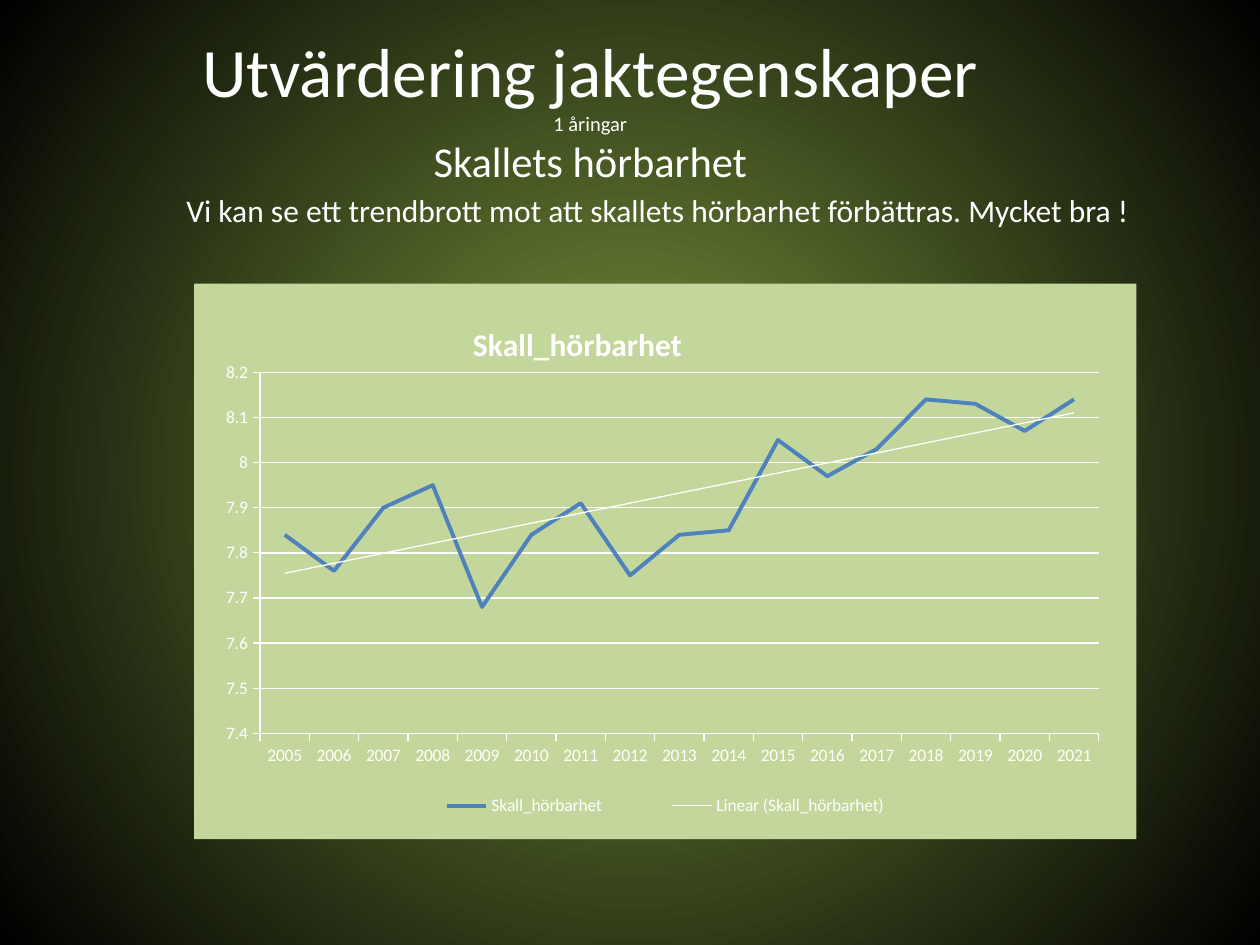
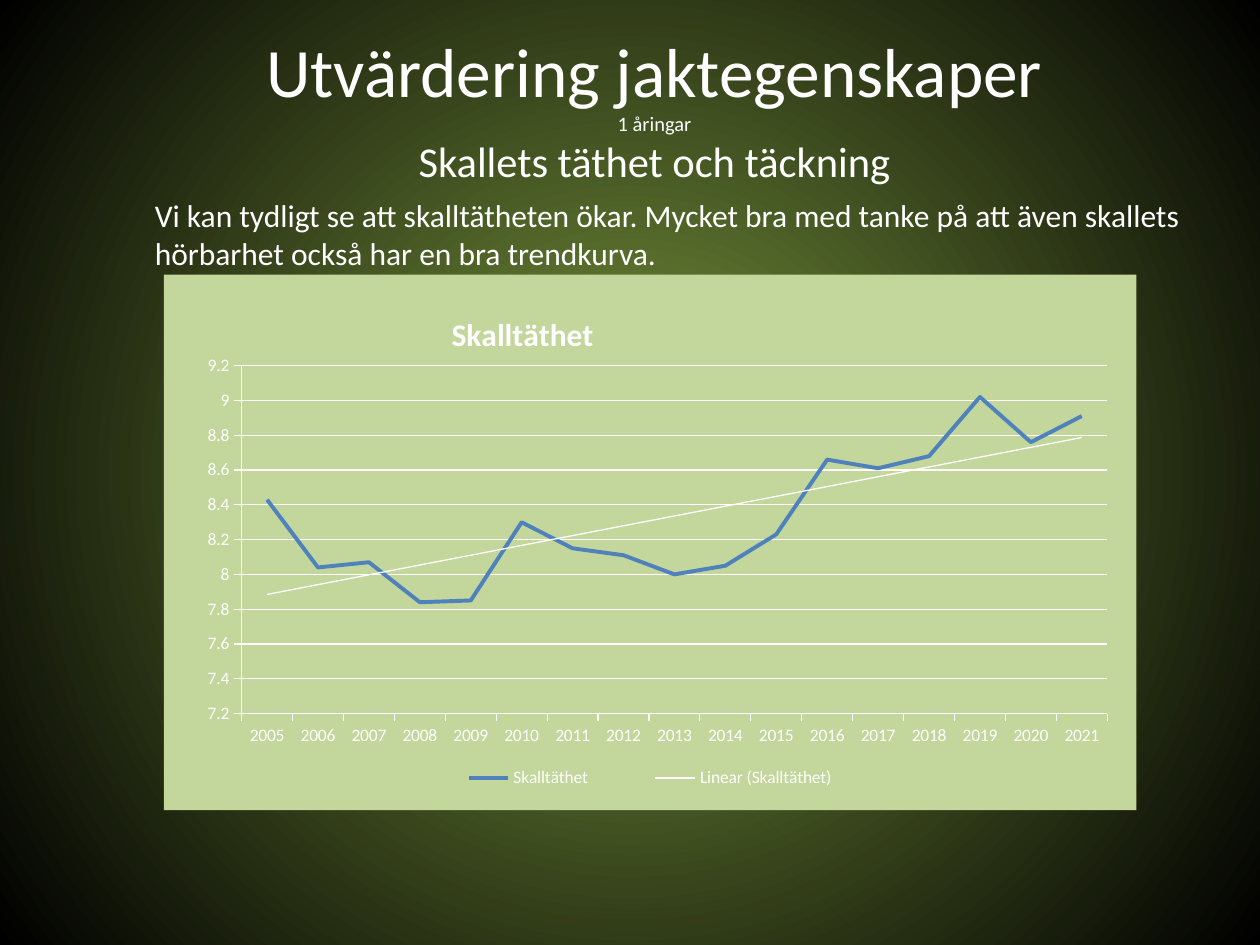
from copy import deepcopy
from dataclasses import dataclass

from lxml.etree import SubElement
from pptx import Presentation
from pptx.chart.data import CategoryChartData
from pptx.dml.color import RGBColor
from pptx.enum.chart import XL_CHART_TYPE as Kind, XL_LEGEND_POSITION as Side
from pptx.enum.chart import XL_TICK_MARK as Tick
from pptx.enum.text import MSO_ANCHOR as Anchor, MSO_AUTO_SIZE as Fit, PP_ALIGN as Align
from pptx.oxml import parse_xml
from pptx.oxml.ns import nsdecls, qn
from pptx.util import Inches, Pt

COLORS = {"text": "FFFFFF", "glow": "77933C", "edge": "000000",
          "panel": "C3D69B", "line": "4F81BD"}
FONT = "Calibri"
YEARS = [str(year) for year in range(2005, 2022)]
HEADS = [("Utvärdering jaktegenskaper", 39.6), ("1 åringar", 11.7)]

Box = tuple[float, float, float, float]


@dataclass
class Trend:
    topic: str
    note: str
    name: str
    values: list[float]
    scale: tuple[float, float, float]  # lowest, highest, step
    left: float
    note_box: Box
    chart_box: Box
    plot: Box
    legend: Box


TRENDS = [
    Trend("Skallets hörbarhet",
          "Vi kan se ett trendbrott mot att skallets hörbarhet förbättras. Mycket bra !",
          "Skall_hörbarhet",
          [7.84, 7.76, 7.9, 7.95, 7.68, 7.84, 7.91, 7.75, 7.84, 7.85, 8.05,
           7.97, 8.03, 8.14, 8.13, 8.07, 8.14],
          (7.4, 8.2, 0.1), 1.35, (1.38, 1.47, 8.38, 0.4), (1.54, 2.25, 7.48, 4.41),
          (0.07, 0.16, 0.89, 0.65), (0.2, 0.9, 0.6, 0.08)),
    Trend("Skallets täthet och täckning",
          "Vi kan tydligt se att skalltätheten ökar. Mycket bra med tanke på att även "
          "skallets hörbarhet också har en bra trendkurva.",
          "Skalltäthet",
          [8.43, 8.04, 8.07, 7.84, 7.85, 8.3, 8.15, 8.11, 8, 8.05, 8.23,
           8.66, 8.61, 8.68, 9.02, 8.76, 8.91],
          (7.2, 9.2, 0.2), 1.86, (1.13, 1.51, 8.69, 0.71), (1.3, 2.18, 7.72, 4.25),
          (0.08, 0.17, 0.89, 0.65), (0.25, 0.9, 0.5, 0.08)),
]


def rgb(key: str) -> RGBColor:
    return RGBColor.from_string(COLORS[key])


def style(font, size: float) -> None:
    font.name, font.size = FONT, Pt(size)
    font.color.rgb = rgb("text")


def add_run(para, text: str, size: float) -> None:
    run = para.add_run()
    run.text = text
    style(run.font, size)


def paint_back(master) -> None:
    """Give all slides a round glow that fades to the edges."""
    fill = master.background.fill
    fill.gradient()
    for stop, key in zip(fill.gradient_stops, ("glow", "edge")):
        stop.color.rgb = rgb(key)
    grad = next(master.element.iter(qn("a:gradFill")))
    for lin in grad.findall(qn("a:lin")):
        grad.remove(lin)
    ring = SubElement(grad, qn("a:path"), {"path": "circle"})
    SubElement(ring, qn("a:fillToRect"), dict.fromkeys("ltrb", "50000"))


def add_title(slide, left: float, topic: str) -> None:
    title = slide.shapes.title
    title.left, title.top = Inches(left), Inches(0.24)
    title.width, title.height = Inches(6.67), Inches(1.22)
    frame = title.text_frame
    frame.auto_size, frame.vertical_anchor = Fit.NONE, Anchor.MIDDLE
    para = frame.paragraphs[0]
    para.alignment = Align.CENTER
    for text, size in HEADS:
        add_run(para, text, size)
        look = para.runs[-1].font._element
        para.add_line_break()
        para._p[-1].append(deepcopy(look))  # the break keeps its line's size
    add_run(para, topic, 24.3)


def add_note(slide, box: Box, text: str) -> None:
    frame = slide.shapes.add_textbox(*map(Inches, box)).text_frame
    frame.word_wrap = True
    frame.auto_size = Fit.SHAPE_TO_FIT_TEXT
    add_run(frame.paragraphs[0], text, 18)


def place(part, spot: int, sizes: dict[str, float], inner: bool = False) -> None:
    """Fix a chart part's place, in shares of the chart's size."""
    for old in part.findall(qn("c:layout")):
        part.remove(old)
    layout = parse_xml(f"<c:layout {nsdecls('c')}/>")
    manual = SubElement(layout, qn("c:manualLayout"))
    if inner:
        SubElement(manual, qn("c:layoutTarget"), val="inner")
    for key in ("x", "y"):
        SubElement(manual, qn(f"c:{key}Mode"), val="edge")
    for key, size in sizes.items():
        SubElement(manual, qn(f"c:{key}"), val=str(size))
    part.insert(spot, layout)


def add_chart(slide, trend: Trend) -> None:
    data = CategoryChartData()
    data.categories = YEARS
    data.add_series(trend.name, trend.values)
    chart = slide.shapes.add_chart(Kind.LINE, *map(Inches, trend.chart_box), data).chart
    style(chart.font, 10)
    root = chart._chartSpace
    root.find(qn("c:chart")).addnext(parse_xml(
        f"<c:spPr {nsdecls('c', 'a')}><a:solidFill><a:srgbClr val='{COLORS['panel']}'/>"
        "</a:solidFill><a:ln><a:noFill/></a:ln></c:spPr>"))

    chart.has_title = True
    add_run(chart.chart_title.text_frame.paragraphs[0], trend.name, 18)
    chart.chart_title.text_frame.paragraphs[0].runs[0].font.bold = True
    place(chart.chart_title._element, 1, {"x": 0.29, "y": 0.06})
    chart.has_legend = True
    chart.legend.position = Side.BOTTOM
    chart.legend.include_in_layout = False
    place(chart.legend._element, 1, dict(zip("xywh", trend.legend)))
    place(next(root.iter(qn("c:plotArea"))), 0, dict(zip("xywh", trend.plot)), True)

    axis = chart.value_axis
    axis.minimum_scale, axis.maximum_scale, axis.major_unit = trend.scale
    axis.tick_labels.number_format = "General"
    axis.tick_labels.number_format_is_linked = False
    axis.has_major_gridlines = True
    for item in (axis, chart.category_axis):
        item.major_tick_mark = Tick.OUTSIDE
    for item in (axis, chart.category_axis, axis.major_gridlines):
        item.format.line.color.rgb = rgb("text")
        item.format.line.width = Pt(0.75)

    plot = chart.plots[0]
    plot.vary_by_categories = False
    line = plot.series[0]
    line.smooth = False
    line.format.line.color.rgb = rgb("line")
    line.format.line.width = Pt(2.25)
    line._element.find(qn("c:cat")).addprevious(parse_xml(
        f"<c:trendline {nsdecls('c', 'a')}><c:spPr><a:ln w='9525'><a:solidFill>"
        f"<a:srgbClr val='{COLORS['text']}'/></a:solidFill></a:ln></c:spPr>"
        "<c:trendlineType val='linear'/><c:dispRSqr val='0'/><c:dispEq val='0'/>"
        "</c:trendline>"))


def main() -> None:
    deck = Presentation()
    deck.slide_width, deck.slide_height = Inches(10), Inches(7.5)
    paint_back(deck.slide_master)
    for trend in TRENDS:
        slide = deck.slides.add_slide(deck.slide_layouts[5])
        add_title(slide, trend.left, trend.topic)
        add_note(slide, trend.note_box, trend.note)
        add_chart(slide, trend)
    deck.save("out.pptx")


if __name__ == "__main__":
    main()
